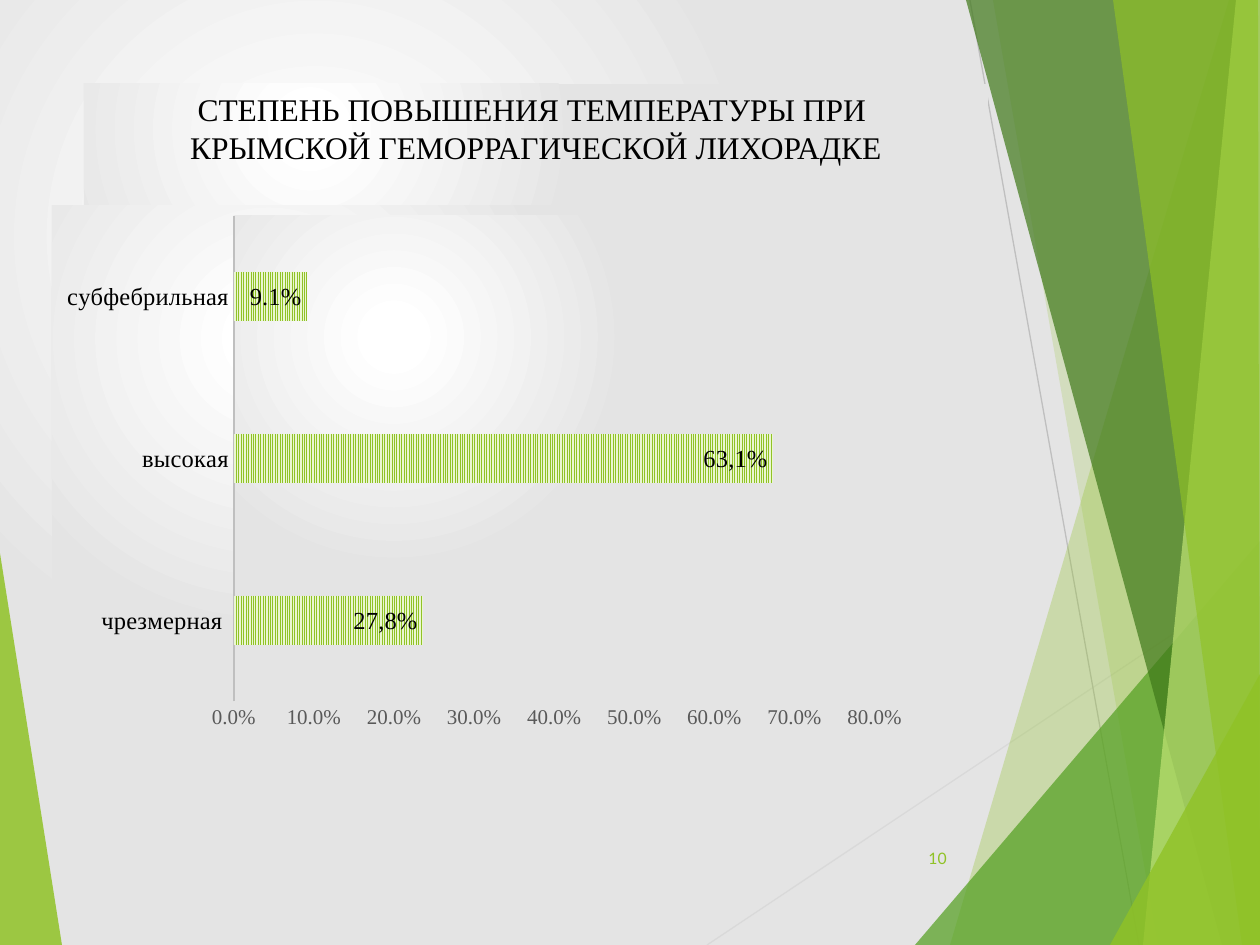
from lxml.etree import SubElement
from pptx import Presentation
from pptx.chart.data import CategoryChartData
from pptx.dml.color import RGBColor
from pptx.enum.chart import XL_CHART_TYPE, XL_LABEL_POSITION, XL_TICK_MARK
from pptx.enum.dml import MSO_PATTERN
from pptx.enum.shapes import MSO_CONNECTOR
from pptx.enum.text import MSO_ANCHOR, MSO_AUTO_SIZE, PP_ALIGN
from pptx.oxml import parse_xml
from pptx.oxml.ns import nsdecls, qn
from pptx.util import Pt

SCALE = 914400 / 126
WIDTH, HEIGHT = 1260, 945
SERIF = "Times New Roman"
SANS = "Lato"
COLORS = {
    "white": "FFFFFF", "mist": "E4E4E4", "black": "000000",
    "gray": "595959", "line": "BFBFBF", "pale": "D9D9D9",
    "lime": "90C226", "tint": "EAF6D1", "green": "54A021",
    "dark": "3F7819", "light": "C0E474",
}
LINES = [
    ((707, 945), (1260, 576), "pale"),
    ((970, 0), (1139, 945), "line"),
]
FACETS = [
    ("lime", 85, [(0, 553), (62, 945), (0, 945)]),
    ("lime", 30, [(1229, 0), (950, 945), (1260, 945), (1260, 0)]),
    ("lime", 20, [(993, 0), (1158, 945), (1260, 945), (1260, 0)]),
    ("green", 72, [(915, 945), (1260, 541), (1260, 945)]),
    ("dark", 70, [(966, 0), (1222, 945), (1260, 945), (1260, 0)]),
    ("light", 70, [(1236, 0), (1143, 945), (1260, 945), (1260, 0)]),
    ("lime", 65, [(1113, 0), (1242, 945), (1260, 945), (1258, 0)]),
    ("lime", 80, [(1110, 945), (1260, 674), (1260, 945)]),
]
VALUES = {"чрезмерная ": 0.236, "высокая": 0.673, "субфебрильная": 0.091}
LABELS = ["27,8%", "63,1%"]


def px(*nums):
    return [round(num * SCALE) for num in nums]


def rgb(name):
    return RGBColor.from_string(COLORS[name])


def style(font, size, color, face):
    font.size = Pt(size)
    font.name = face
    font.bold = False
    font.color.rgb = rgb(color)


def glow():
    stops = "".join(
        f'<a:gs pos="{pos}000"><a:srgbClr val="{COLORS[name]}"/></a:gs>'
        for pos, name in ((5, "white"), (59, "mist")))
    return parse_xml(
        f'<a:gradFill {nsdecls("a")} rotWithShape="1"><a:gsLst>{stops}</a:gsLst>'
        '<a:path path="circle"><a:fillToRect l="50000" t="50000" '
        'r="100000" b="100000"/></a:path></a:gradFill>')


def shade(fill, root):
    fill.solid()
    old = next(root.iter(qn("a:solidFill")))
    old.getparent().replace(old, glow())


def panel():
    props = parse_xml(f'<c:spPr {nsdecls("c", "a")}><a:ln><a:noFill/></a:ln></c:spPr>')
    props.insert(0, glow())
    return props


def add_line(slide, start, end, color):
    line = slide.shapes.add_connector(MSO_CONNECTOR.STRAIGHT, *px(*start, *end))
    line.line.color.rgb = rgb(color)
    line.line.width = Pt(0.75)
    SubElement(line._element.spPr, qn("a:effectLst"))


def add_facet(slide, color, alpha, points):
    pen = slide.shapes.build_freeform(*points[0], scale=SCALE)
    pen.add_line_segments(points[1:], close=True)
    shape = pen.convert_to_shape()
    shape.shadow.inherit = False
    shape.line.fill.background()
    shape.fill.solid()
    shape.fill.fore_color.rgb = rgb(color)
    tone = next(shape._element.spPr.iter(qn("a:srgbClr")))
    SubElement(tone, qn("a:alpha"), val=str(alpha * 1000))


def add_title(slide):
    title = slide.shapes.title
    title.left, title.top, title.width, title.height = px(84, 84, 904, 181)
    shade(title.fill, title._element.spPr)
    frame = title.text_frame
    frame.text = "СТЕПЕНЬ ПОВЫШЕНИЯ ТЕМПЕРАТУРЫ ПРИ \vКРЫМСКОЙ ГЕМОРРАГИЧЕСКОЙ ЛИХОРАДКЕ"
    frame.vertical_anchor = MSO_ANCHOR.TOP
    frame.auto_size = MSO_AUTO_SIZE.NONE
    frame.word_wrap = True
    para = frame.paragraphs[0]
    para.alignment = PP_ALIGN.CENTER
    for run in para.runs:
        style(run.font, 18, "black", SERIF)
    slide.shapes._spTree.append(title._element)


def add_number(slide):
    frame = slide.shapes.add_textbox(*px(888, 833, 71, 50)).text_frame
    frame.text = "10"
    frame.word_wrap = True
    frame.vertical_anchor = MSO_ANCHOR.MIDDLE
    para = frame.paragraphs[0]
    para.alignment = PP_ALIGN.RIGHT
    style(para.runs[0].font, 9, "lime", SANS)


def set_axis(axis, size, color):
    axis.has_major_gridlines = False
    axis.major_tick_mark = axis.minor_tick_mark = XL_TICK_MARK.NONE
    style(axis.tick_labels.font, size, color, SERIF)


def set_labels(plot, series):
    plot.has_data_labels = True
    for labels in (plot.data_labels, series.data_labels):
        labels.show_value = True
        labels.number_format = "0.0%"
        labels.number_format_is_linked = False
        labels.position = XL_LABEL_POSITION.INSIDE_END
        style(labels.font, 14, "black", SERIF)
    for index, text in enumerate(LABELS):
        label = series.points[index].data_label
        label.text_frame.text = text
        style(label.text_frame.paragraphs[0].runs[0].font, 14, "black", SERIF)
        label.position = XL_LABEL_POSITION.INSIDE_END


def set_area(chart):
    root = chart._chartSpace
    area = next(root.iter(qn("c:plotArea")))
    for old in area.findall(qn("c:layout")):
        area.remove(old)
    parts = {"x": 0.21, "y": 0.02, "w": 0.74, "h": 0.91}
    spots = "".join(f'<c:{key} val="{val}"/>' for key, val in parts.items())
    area.insert(0, parse_xml(
        f'<c:layout {nsdecls("c")}><c:manualLayout><c:layoutTarget val="inner"/>'
        f'<c:xMode val="edge"/><c:yMode val="edge"/>{spots}</c:manualLayout></c:layout>'))
    area.append(panel())
    root.find(qn("c:chart")).addnext(panel())


def add_bars(slide):
    data = CategoryChartData(number_format="0.0%")
    data.categories = list(VALUES)
    data.add_series("Series 1", list(VALUES.values()))
    chart = slide.shapes.add_chart(
        XL_CHART_TYPE.BAR_CLUSTERED, *px(52, 205, 866, 534), data).chart
    chart.has_legend = chart.has_title = False
    style(chart.font, 10, "black", SANS)
    plot = chart.plots[0]
    plot.gap_width, plot.overlap = 227, -48
    plot.vary_by_categories = False
    series = plot.series[0]
    fill = series.format.fill
    fill.patterned()
    fill.pattern = MSO_PATTERN.NARROW_VERTICAL
    fill.fore_color.rgb = rgb("lime")
    fill.back_color.rgb = rgb("tint")
    set_labels(plot, series)
    cats, vals = chart.category_axis, chart.value_axis
    set_axis(cats, 14, "black")
    cats.format.line.color.rgb = rgb("line")
    cats.format.line.width = Pt(1.5)
    set_axis(vals, 12, "gray")
    vals.format.line.fill.background()
    vals.minimum_scale, vals.maximum_scale, vals.major_unit = 0, 0.8, 0.1
    vals.tick_labels.number_format = "0.0%"
    vals.tick_labels.number_format_is_linked = False
    set_area(chart)


def main():
    deck = Presentation()
    deck.slide_width, deck.slide_height = px(WIDTH, HEIGHT)
    slide = deck.slides.add_slide(deck.slide_layouts[5])
    shade(slide.background.fill, slide._element)
    for line in LINES:
        add_line(slide, *line)
    for facet in FACETS:
        add_facet(slide, *facet)
    add_title(slide)
    add_number(slide)
    add_bars(slide)
    deck.save("out.pptx")


if __name__ == "__main__":
    main()
